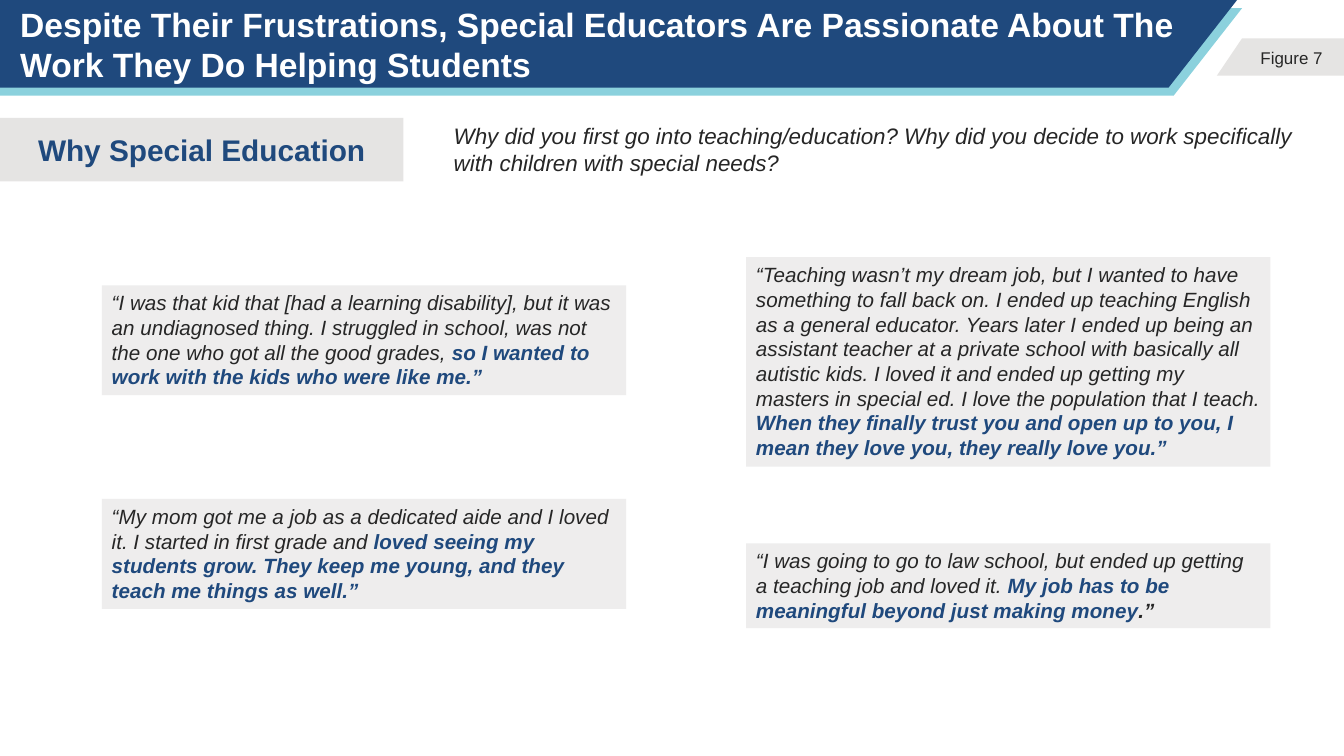
from lxml import etree
from pptx import Presentation
from pptx.dml.color import RGBColor
from pptx.enum.shapes import MSO_SHAPE
from pptx.enum.text import MSO_ANCHOR, PP_ALIGN
from pptx.oxml.ns import qn
from pptx.util import Inches, Pt

RECTANGLE = MSO_SHAPE.RECTANGLE
MIDDLE, TOP = MSO_ANCHOR.MIDDLE, MSO_ANCHOR.TOP
LEFT, CENTER = PP_ALIGN.LEFT, PP_ALIGN.CENTER

SLIDE_WIDTH, SLIDE_HEIGHT = 13.33, 7.5
COMPARISON_LAYOUT = 4
FONT = "Arial"
COLORS = {
    "navy": "1F497D",
    "teal": "8BD1DD",
    "taupe": "ACA7A3",
    "panel": "EEEDED",
    "ink": "262626",
    "white": "FFFFFF",
}
BANNER = (0, 0, 12.27, 0.87)
BANNER_SLANT = 0.68
BANNER_SHADE_OFFSET = (0.05, 0.08)
FIGURE_TAB = (12.07, 0.38, 1.26, 0.37)
TOPIC = (0, 1.17, 4, 0.63)
QUESTION = (4.4, 1.14, 8.53, 0.68)
QUOTE_COLUMNS = (1.01, 7.4)
QUOTE_WIDTH, QUOTE_LINE, QUOTE_PADDING = 5.2, 0.2475, 0.1

# column, top, number of lines, then (text, color, bold) runs
QUOTES = [
    (0, 2.83, 4, [
        ("“I was that kid that [had a learning disability], but it was an "
         "undiagnosed thing. I struggled in school, was not the one who got "
         "all the good grades, ", "ink", False),
        ("so I wanted to work with the kids who were like me.”", "navy", True),
    ]),
    (1, 2.55, 8, [
        ("“Teaching wasn’t my dream job, but I wanted to have something to "
         "fall back on. I ended up teaching English as a general educator. "
         "Years later I ended up being an assistant teacher at a private "
         "school with basically all autistic kids. I loved it and ended up "
         "getting my masters in special ed. I love the population that I "
         "teach. ", "ink", False),
        ("When they finally trust you and open up to you, I mean they love "
         "you, they really love you.”", "navy", True),
    ]),
    (0, 4.95, 4, [
        ("“My mom got me a job as a dedicated aide and I loved it. I started "
         "in first grade and ", "ink", False),
        ("loved seeing my students grow. They keep me young, and they teach "
         "me things as well.”", "navy", True),
    ]),
    (1, 5.39, 3, [
        ("“I was going to go to law school, but ended up getting a teaching "
         "job and loved it. ", "ink", False),
        ("My job has to be meaningful beyond just making money", "navy", True),
        (".”", "ink", True),
    ]),
]


def rgb(name):
    return RGBColor.from_string(COLORS[name])


def place(shape, box):
    shape.left, shape.top, shape.width, shape.height = map(Inches, box)


def paint(shape, color, opacity=100):
    shape.fill.solid()
    shape.fill.fore_color.rgb = rgb(color)
    if opacity < 100:
        color_element = shape.fill._xPr.find(".//" + qn("a:srgbClr"))
        alpha = etree.SubElement(color_element, qn("a:alpha"))
        alpha.set("val", str(opacity * 1000))


def write(shape, runs, size, align=LEFT, anchor=MIDDLE, italic=False, side=0.1):
    """Fill the shape with one paragraph of (text, color, bold) runs."""
    frame = shape.text_frame
    frame.word_wrap = True
    frame.vertical_anchor = anchor
    frame.margin_left = frame.margin_right = Inches(side)
    frame.margin_top = frame.margin_bottom = Inches(0.05)
    paragraph = frame.paragraphs[0]
    paragraph.alignment = align
    paragraph.space_before = Pt(0)
    for text, color, bold in runs:
        run = paragraph.add_run()
        run.text = text
        run.font.name = FONT
        run.font.size = Pt(size)
        run.font.bold = bold
        run.font.italic = italic
        run.font.color.rgb = rgb(color)


def add_outline(slide, points, color, opacity=100):
    start, *rest = [(Inches(x), Inches(y)) for x, y in points]
    builder = slide.shapes.build_freeform(*start)
    builder.add_line_segments(rest)
    shape = builder.convert_to_shape()
    shape.shadow.inherit = False
    shape.line.fill.background()
    paint(shape, color, opacity)


def add_banner(slide, box):
    left, top, width, height = box
    for (dx, dy), color in ((BANNER_SHADE_OFFSET, "teal"), ((0, 0), "navy")):
        right, upper, lower = left + width + dx, top + dy, top + height + dy
        add_outline(slide, [(left, upper), (right, upper),
                            (right - BANNER_SLANT, lower), (left, lower)], color)


def add_figure_tab(slide, box):
    left, top, width, height = box
    slant, right, bottom = 0.25, left + width, top + height
    add_outline(slide, [(left + slant, top), (right, top),
                        (right, bottom), (left, bottom)], "taupe", 30)
    label = slide.shapes.add_textbox(0, 0, 0, 0)
    place(label, (left + 0.27, top + 0.04, 0.94, 0.3))
    write(label, [("Figure 7", "ink", False)], 12.1, CENTER)


def add_headings(slide):
    title, topic, question = [slide.placeholders[index] for index in (0, 1, 3)]
    for index in (2, 4):
        unused = slide.placeholders[index].element
        unused.getparent().remove(unused)

    place(title, BANNER)
    write(title, [("Despite Their Frustrations, Special Educators Are Passionate "
                   "About The Work They Do Helping Students", "white", True)],
          24, side=0.2)
    place(topic, TOPIC)
    paint(topic, "taupe", 30)
    write(topic, [("Why Special Education", "navy", True)], 21.3, CENTER)
    place(question, QUESTION)
    write(question, [("Why did you first go into teaching/education? Why did you "
                      "decide to work specifically with children with special "
                      "needs?", "ink", False)], 16, italic=True)
    return title


def add_quote(slide, column, top, lines, runs):
    panel = slide.shapes.add_shape(RECTANGLE, 0, 0, 0, 0)
    place(panel, (QUOTE_COLUMNS[column], top, QUOTE_WIDTH,
                  lines * QUOTE_LINE + QUOTE_PADDING))
    panel.shadow.inherit = False
    panel.line.fill.background()
    paint(panel, "panel")
    write(panel, runs, 14.7, anchor=TOP, italic=True)


def main():
    presentation = Presentation()
    presentation.slide_width = Inches(SLIDE_WIDTH)
    presentation.slide_height = Inches(SLIDE_HEIGHT)
    slide = presentation.slides.add_slide(
        presentation.slide_layouts[COMPARISON_LAYOUT])
    title = add_headings(slide)
    add_banner(slide, BANNER)
    add_figure_tab(slide, FIGURE_TAB)
    slide.shapes._spTree.append(title.element)
    for quote in QUOTES:
        add_quote(slide, *quote)
    presentation.save("out.pptx")


if __name__ == "__main__":
    main()
